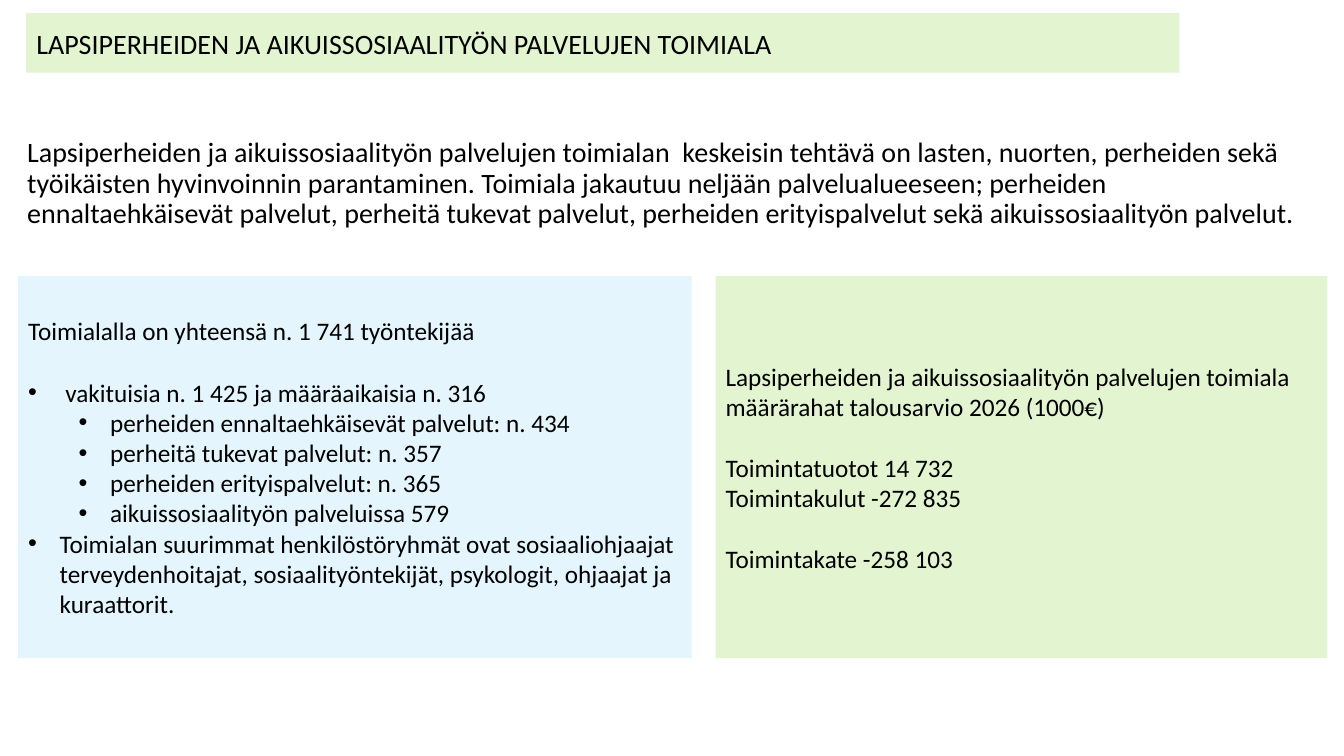
import pptx
import pptx.util
import pptx.dml.color
import pptx.enum.shapes
import pptx.enum.text
import pptx.oxml
import pptx.oxml.ns
import lxml.etree

Pt = pptx.util.Pt
GREEN, BLUE, BLACK = "E3F4D1", "E4F5FD", "000000"
GAP = 22  # space that sets groups of lines apart
STEP = 22.5  # hanging indent of a bullet


def paint(target, hue):
    """Give a fill or a font a solid colour."""
    if hasattr(target, "solid"):
        target.solid()
        target.fore_color.rgb = pptx.dml.color.RGBColor.from_string(hue)
    else:
        target.color.rgb = pptx.dml.color.RGBColor.from_string(hue)


def place(shape, box):
    shape.left, shape.top, shape.width, shape.height = map(Pt, box)


def node(parent, tag, **attrs):
    return lxml.etree.SubElement(parent, pptx.oxml.ns.qn(tag), attrs)


def setup(frame, anchor):
    frame.word_wrap = True
    frame.auto_size = pptx.enum.text.MSO_AUTO_SIZE.NONE
    frame.vertical_anchor = anchor


def write(para, text, size, before=0):
    para.alignment = pptx.enum.text.PP_ALIGN.LEFT
    para.space_before = Pt(before)
    run = para.add_run()
    run.text = text
    run.font.size = Pt(size)
    run.font.name = "Calibri"
    paint(run.font, BLACK)


def indent(para, left, mark):
    """Set a hanging bullet, or none when there is no mark."""
    props = para._p.get_or_add_pPr()
    props.set("marL", str(Pt(left)))
    props.set("indent", str(-Pt(STEP) if mark else 0))
    if mark:
        node(props, "a:buFont", typeface="Arial")
        node(props, "a:buChar", char=mark)
    else:
        node(props, "a:buNone")


# Heading band
def header(slide, box, text):
    title = slide.shapes.title
    place(title, box)
    geom = node(title._element.spPr, "a:prstGeom", prst="round2DiagRect")
    node(geom, "a:avLst")
    paint(title.fill, GREEN)
    setup(title.text_frame, pptx.enum.text.MSO_ANCHOR.MIDDLE)
    write(title.text_frame.paragraphs[0], text, 20)


# Introduction
def intro(slide, box, text):
    body = slide.placeholders[1]
    place(body, box)
    setup(body.text_frame, pptx.enum.text.MSO_ANCHOR.TOP)
    body.text_frame.margin_top = Pt(35.6)
    para = body.text_frame.paragraphs[0]
    indent(para, 0, None)
    para.line_spacing = 0.9
    write(para, text, 20)


# Coloured panel: each line has its text, space before and bullet level
def panel(slide, box, hue, lines):
    kind = pptx.enum.shapes.MSO_SHAPE.RECTANGLE
    shape = slide.shapes.add_shape(kind, *map(Pt, box))
    shape.shadow.inherit = False
    shape.line.fill.background()
    paint(shape.fill, hue)
    frame = shape.text_frame
    setup(frame, pptx.enum.text.MSO_ANCHOR.MIDDLE)
    for i, (text, before, level) in enumerate(lines):
        para = frame.add_paragraph() if i else frame.paragraphs[0]
        if level:
            para.level = level - 1
            indent(para, STEP + 36 * (level - 1), "•")
        write(para, text, 18, before)


STAFF = [
    ("Toimialalla on yhteensä n. 1 741 työntekijää", 0, 0),
    (" vakituisia n. 1 425 ja määräaikaisia n. 316", GAP, 1),
    ("perheiden ennaltaehkäisevät palvelut: n. 434", 0, 2),
    ("perheitä tukevat palvelut: n. 357", 0, 2),
    ("perheiden erityispalvelut: n. 365", 0, 2),
    ("aikuissosiaalityön palveluissa 579", 0, 2),
    ("Toimialan suurimmat henkilöstöryhmät ovat sosiaaliohjaajat "
     "terveydenhoitajat, sosiaalityöntekijät, psykologit, ohjaajat ja "
     "kuraattorit.", 0, 1),
]
FUNDS = [
    ("Lapsiperheiden ja aikuissosiaalityön palvelujen toimiala", 0, 0),
    ("määrärahat talousarvio 2026 (1000€)", 0, 0),
    ("Toimintatuotot 14 732", GAP, 0),
    ("Toimintakulut -272 835", 0, 0),
    ("Toimintakate -258 103", GAP, 0),
]


def main():
    deck = pptx.Presentation()
    deck.slide_width, deck.slide_height = Pt(960), Pt(540)
    slide = deck.slides.add_slide(deck.slide_layouts[1])
    header(slide, (18.7, 9.4, 823.7, 42.5),
           "LAPSIPERHEIDEN JA AIKUISSOSIAALITYÖN PALVELUJEN TOIMIALA")
    intro(slide, (12.2, 63.4, 935.3, 122.4),
          "Lapsiperheiden ja aikuissosiaalityön palvelujen toimialan  "
          "keskeisin tehtävä on lasten, nuorten, perheiden sekä työikäisten "
          "hyvinvoinnin parantaminen. Toimiala jakautuu neljään "
          "palvelualueeseen; perheiden ennaltaehkäisevät palvelut, perheitä "
          "tukevat palvelut, perheiden erityispalvelut sekä "
          "aikuissosiaalityön palvelut.")
    top, height = 197.3, 272.9
    panel(slide, (13, top, 481, height), BLUE, STAFF)
    panel(slide, (511.2, top, 437, height), GREEN, FUNDS)
    deck.save("out.pptx")


if __name__ == "__main__":
    main()
